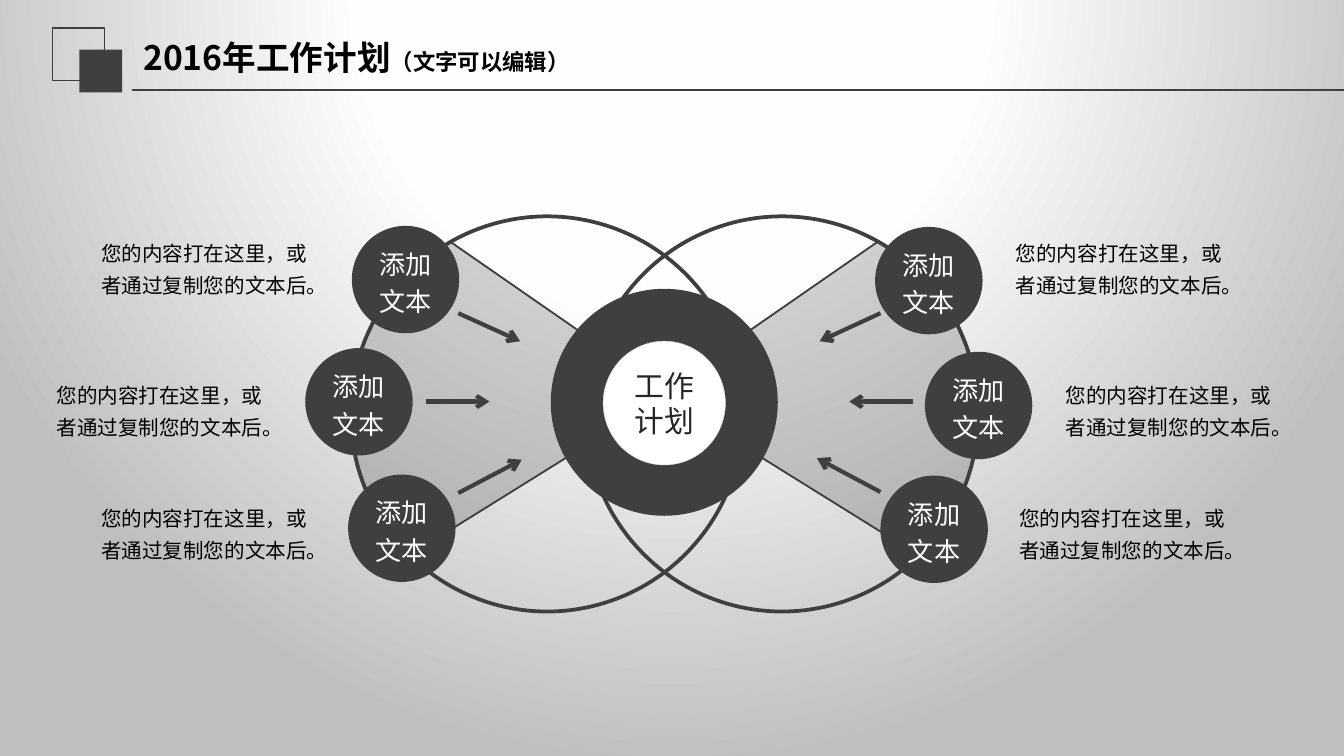
from pptx import Presentation, oxml, util as u
from pptx.dml import color
from pptx.enum import shapes, text
from pptx.oxml import ns

COLORS = {"dark": "3F3F3F", "white": "FFFFFF", "rim": "D7D7D7",
          "label": "262626", "black": "000000"}
NODE_TEXT = "添加文本"
CAPTION_TEXT = "您的内容打在这里，或者通过复制您的文本后。"


def paint(shape, fill=None, line=None, width=1):
    """Set fill and outline, and drop the shadow."""
    shape.shadow.inherit = False
    if fill:
        shape.fill.solid()
        shape.fill.fore_color.rgb = color.RGBColor.from_string(COLORS[fill])
    else:
        shape.fill.background()
    if line:
        shape.line.color.rgb = color.RGBColor.from_string(COLORS[line])
        shape.line.width = u.Pt(width)
    else:
        shape.line.fill.background()


def write(shape, spans, font, ink, spacing=1.0, inset=(0.18, 0.1)):
    """Write one paragraph of (text, size) spans."""
    frame = shape.text_frame
    frame.word_wrap = True
    frame.margin_left = frame.margin_right = u.Cm(inset[0])
    frame.margin_top = frame.margin_bottom = u.Cm(inset[1])
    para = frame.paragraphs[0]
    para.line_spacing = spacing
    para.font.name = font
    para.font.size = u.Pt(spans[0][1])
    para.font.color.rgb = color.RGBColor.from_string(COLORS[ink])
    for words, size in spans:
        span = para.add_run()
        span.text = words
        if len(spans) > 1:
            span.font.size = u.Pt(size)
    return para


deck = Presentation()
deck.slide_width, deck.slide_height = u.Cm(25.4), u.Cm(14.29)
page = deck.slides.add_slide(deck.slide_layouts[6])
RECT, OVAL = shapes.MSO_SHAPE.RECTANGLE, shapes.MSO_SHAPE.OVAL

# Background: light circle spreading from above the page
page.background.fill.gradient()
gradient = page.element.find(".//" + ns.qn("a:gradFill"))
stops = "".join(f'<a:gs pos="{pos}"><a:srgbClr val="{tone}"/></a:gs>' for pos, tone in
                [(0, "FFFFFF"), (40000, "FEFEFE"), (100000, "BFBFBF")])
gradient.getparent().replace(gradient, oxml.parse_xml(
    f'<a:gradFill {ns.nsdecls("a")} rotWithShape="1"><a:gsLst>{stops}</a:gsLst>'
    '<a:path path="circle"><a:fillToRect l="50000" t="-80000" r="50000" b="180000"/>'
    '</a:path></a:gradFill>'))

# Header squares and title
frame_square = page.shapes.add_shape(RECT, u.Cm(0.99), u.Cm(0.53), u.Cm(0.99), u.Cm(0.99))
paint(frame_square, line="dark", width=0.75)
solid_square = page.shapes.add_shape(RECT, u.Cm(1.5), u.Cm(0.94), u.Cm(0.81), u.Cm(0.81))
paint(solid_square, fill="dark")
title = page.shapes.add_textbox(u.Cm(2.46), u.Cm(0.53), u.Cm(9.04), u.Cm(1.09))
title.text_frame.vertical_anchor = text.MSO_ANCHOR.MIDDLE
heading = write(title, [("2016年", 18), ("工作计划", 18), ("（文字可以编辑）", 12)],
                "Noto Sans CJK SC", "black", inset=(0.25, 0.13))
heading.font.bold = True

# Shaded wedges: the left one mirrors the right one
MIRROR = 25.1
curves = [[(17.96, 5.94), (17.37, 5.13), (17.5, 5.18), (16.59, 4.57)],
          [(17.35, 10.49), (18.54, 9.04), (18.42, 8.53), (18.47, 7.77)],
          [(18.47, 7.77), (18.44, 7.14), (18.31, 6.48), (17.96, 5.94)]]
STEPS = 12
arcs = []
for curve in curves:
    arc = []
    for step in range(STEPS + 1):
        t = step / STEPS
        weights = [(1 - t) ** 3, 3 * t * (1 - t) ** 2, 3 * t * t * (1 - t), t ** 3]
        arc.append([sum(w * point[axis] for w, point in zip(weights, curve))
                    for axis in (0, 1)])
    arcs.append(arc)
outline = arcs[0] + [(12.45, 7.44)] + arcs[1] + arcs[2][1:-1]
for mirrored in (False, True):
    points = [(u.Cm(MIRROR - x if mirrored else x), u.Cm(y)) for x, y in outline]
    builder = page.shapes.build_freeform(*points[0])
    builder.add_line_segments(points[1:], close=True)
    wedge = builder.convert_to_shape()
    paint(wedge, fill="dark", line="dark")
    tint = wedge.element.spPr.find(ns.qn("a:solidFill"))[0]
    tint.append(oxml.parse_xml(f'<a:alpha {ns.nsdecls("a")} val="24000"/>'))

# Two overlapping rings
for left in (6.63, 11.07):
    ring = page.shapes.add_shape(OVAL, u.Cm(left), u.Cm(4.09), u.Cm(7.42), u.Cm(7.47))
    paint(ring, line="dark", width=2)

# Header rule, then arrows pointing to the centre
lines = [(2.49, 1.7, 25.4, 1.7),
         (8.66, 5.92, 9.83, 6.45), (8.05, 7.59, 9.25, 7.59), (8.66, 9.32, 9.86, 8.69),
         (16.64, 9.3, 15.44, 8.66), (17.25, 7.59, 16.05, 7.59), (16.64, 5.92, 15.49, 6.45)]
for number, ends in enumerate(lines):
    line = page.shapes.add_connector(shapes.MSO_CONNECTOR.STRAIGHT, *map(u.Cm, ends))
    line.line.color.rgb = color.RGBColor.from_string(COLORS["dark"])
    line.line.width = u.Pt(2.25 if number else 1.25)
    if number:
        line.line._get_or_add_ln().append(
            oxml.parse_xml(f'<a:tailEnd {ns.nsdecls("a")} type="arrow"/>'))
    line.element.spPr.append(oxml.parse_xml(f'<a:effectLst {ns.nsdecls("a")}/>'))

# Centre disc
disc = page.shapes.add_shape(OVAL, u.Cm(10.41), u.Cm(5.46), u.Cm(4.29), u.Cm(4.29))
paint(disc, fill="dark")
core = page.shapes.add_shape(OVAL, u.Cm(11.4), u.Cm(6.45), u.Cm(2.31), u.Cm(2.34))
paint(core, fill="white", line="rim", width=0.25)
core_para = write(core, [("工作计划", 16)], "Arial Narrow", "label", inset=(0.1, 0.1))
core_para.alignment = text.PP_ALIGN.CENTER

# Outer nodes
for left, top in [(6.65, 4.27), (16.54, 4.29), (17.48, 6.65),
                  (16.64, 8.99), (5.77, 6.58), (6.58, 8.97)]:
    node = page.shapes.add_shape(OVAL, u.Cm(left), u.Cm(top), u.Cm(2.03), u.Cm(2.03))
    paint(node, fill="dark")
    node_para = write(node, [(NODE_TEXT, 14)], "Arial", "white", spacing=1.2)
    node_para.alignment = text.PP_ALIGN.CENTER

# Captions beside the nodes
for left, top in [(1.73, 4.32), (19.02, 4.32), (0.89, 7.01),
                  (19.96, 7.01), (19.08, 9.32), (1.73, 9.32)]:
    box = page.shapes.add_textbox(u.Cm(left), u.Cm(top), u.Cm(4.37), u.Cm(1.45))
    write(box, [(CAPTION_TEXT, 11)], "Noto Sans CJK SC", "black", spacing=1.3)

deck.save("out.pptx")
